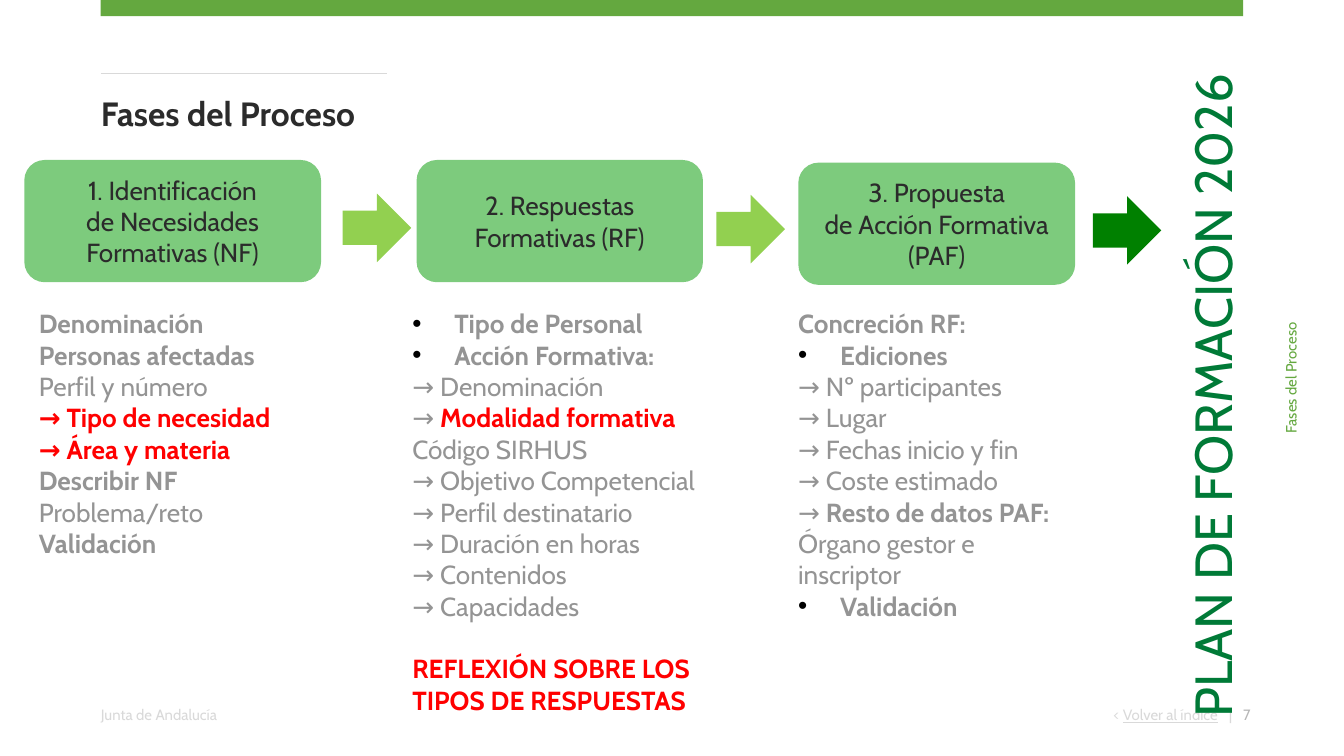
"""Build the slide with the three phases of the training plan process."""
from lxml import etree
from pptx import Presentation
from pptx import util as u
from pptx.enum import shapes as s, text as t
from pptx.oxml import ns

Pt = u.Pt
LEFT, CENTER, RIGHT = t.PP_ALIGN.LEFT, t.PP_ALIGN.CENTER, t.PP_ALIGN.RIGHT
TOP, MIDDLE = t.MSO_ANCHOR.TOP, t.MSO_ANCHOR.MIDDLE
DARK, GREY, PALE, RED, GREEN = "2B2B2B", "949494", "D9D9D9", "FF0000", "64A83F"


def paint(fill, colour):
    fill.solid()
    fill.fore_color.rgb = ns_colour.from_string(colour)


def write(frame, paragraphs, align=LEFT, anchor=TOP, inset=(7.2, 3.6)):
    across, down = (Pt(gap) for gap in inset)
    layout = dict(word_wrap=True, auto_size=t.MSO_AUTO_SIZE.NONE, vertical_anchor=anchor,
                  margin_left=across, margin_right=across, margin_top=down, margin_bottom=down)
    for key, value in layout.items():
        setattr(frame, key, value)
    for number, runs in enumerate(paragraphs):
        paragraph = frame.add_paragraph() if number else frame.paragraphs[0]
        paragraph.alignment = align
        for words, size, colour, bold, underline in runs:
            run = paragraph.add_run()
            run.text = words
            look = dict(name="Cabin", size=Pt(size), bold=bold, underline=underline)
            for key, value in look.items():
                setattr(run.font, key, value)
            paint(run.font.fill, colour)


from pptx.dml.color import RGBColor as ns_colour

deck = Presentation()
deck.slide_width, deck.slide_height = Pt(720), Pt(405)
slide = deck.slides.add_slide(deck.slide_layouts[5])

title = slide.shapes.title
place = dict(left=Pt(54), top=Pt(49.7), width=Pt(282), height=Pt(58.3))
for key, value in place.items():
    setattr(title, key, value)
write(title.text_frame, [[("Fases del Proceso", 18, DARK, True, False)]], inset=(0, 0))

top_bar = slide.shapes.add_shape(s.MSO_SHAPE.RECTANGLE, Pt(54), 0, Pt(612), Pt(8.64))
top_bar.shadow.inherit = False
paint(top_bar.fill, GREEN)
top_bar.line.fill.background()

title_rule = slide.shapes.add_connector(s.MSO_CONNECTOR.STRAIGHT, Pt(54), Pt(39.4), Pt(207.4), Pt(39.4))
paint(title_rule.line.fill, PALE)
title_rule.line.width = Pt(0.75)
etree.SubElement(title_rule.element.spPr, ns.qn("a:effectLst"))

small_texts = [
    (54, 378, 140, 16, 0, LEFT, TOP, [("Junta de Andalucía", 8, PALE, False, False)]),
    (475.2, 378, 177.4, 16, 0, RIGHT, TOP, [("< ", 8, PALE, False, False),
                                            ("Volver al índice", 8, PALE, False, True)]),
    (650, 378, 10.2, 16, 0, RIGHT, TOP, [("|", 8, PALE, False, False)]),
    (666, 378, 40, 21, 0, LEFT, TOP, [("7", 8, "B7B7B7", False, False)]),
    (599, 194.4, 185, 16, 270, CENTER, MIDDLE, [("Fases del Proceso", 8, GREEN, False, False)]),
    (462.2, 191.5, 373.7, 41, 270, CENTER, MIDDLE,
     [("PLAN DE FORMACIÓN 2026", 28, "007A37", False, False)]),
]
for left, top, width, height, turn, align, anchor, runs in small_texts:
    label = slide.shapes.add_textbox(Pt(left), Pt(top), Pt(width), Pt(height))
    label.rotation = turn
    write(label.text_frame, [runs], align, anchor, (0, 0))

phases = [
    (13, 85.7, 159, ["1. Identificación", "de Necesidades Formativas (NF)"]),
    (223.2, 85.7, 153.4, ["2. Respuestas Formativas (RF)"]),
    (427.7, 87.1, 148.3, ["3. Propuesta", "de Acción Formativa (PAF)"]),
]
for left, top, width, lines in phases:
    phase = slide.shapes.add_shape(s.MSO_SHAPE.ROUNDED_RECTANGLE, Pt(left), Pt(top), Pt(width), Pt(65.5))
    phase.shadow.inherit = False
    paint(phase.fill, "009900")
    tint = phase.element.spPr.find(ns.qn("a:solidFill"))[0]
    etree.SubElement(tint, ns.qn("a:alpha"), val="51000")
    phase.line.fill.background()
    write(phase.text_frame, [[(line, 14, DARK, False, False)] for line in lines], CENTER, MIDDLE)

for left, top, colour in [(183.6, 103.7, "92D050"), (383.8, 104.4, "92D050"), (585.4, 105.1, "008000")]:
    arrow = slide.shapes.add_shape(s.MSO_SHAPE.RIGHT_ARROW, Pt(left), Pt(top), Pt(36.7), Pt(36.7))
    arrow.shadow.inherit = False
    paint(arrow.fill, colour)
    arrow.line.fill.background()

styles = {"plain": (GREY, False), "bold": (GREY, True), "bullet": (GREY, True), "red": (RED, True)}
details = [
    (13.7, 170, 143, [
        ("bold", "Denominación"), ("bold", "Personas afectadas"), ("plain", "Perfil y número"),
        ("red", "→ Tipo de necesidad"), ("red", "→ Área y materia"), ("bold", "Describir NF"),
        ("plain", "Problema/reto"), ("bold", "Validación")]),
    (213.8, 170, 227.5, [
        ("bullet", "Tipo de Personal"), ("bullet", "Acción Formativa:"), ("plain", "→ Denominación"),
        ("red", "Modalidad formativa", "→ "), ("plain", "Código SIRHUS"),
        ("plain", "→ Objetivo Competencial"), ("plain", "→ Perfil destinatario"),
        ("plain", "→ Duración en horas"), ("plain", "→ Contenidos"), ("plain", "→ Capacidades"),
        ("red", "REFLEXIÓN SOBRE LOS TIPOS DE RESPUESTAS")]),
    (420.5, 190, 177, [
        ("bold", "Concreción RF:"), ("bullet", "Ediciones"), ("plain", "→ Nº participantes"),
        ("plain", "→ Lugar"), ("plain", "→ Fechas inicio y fin"), ("plain", "→ Coste estimado"),
        ("bold", "Resto de datos PAF:", "→ "), ("plain", "Órgano gestor e"),
        ("plain", "inscriptor"), ("bullet", "Validación")]),
]
for left, width, height, entries in details:
    detail = slide.shapes.add_textbox(Pt(left), Pt(161.3), Pt(width), Pt(height))
    write(detail.text_frame, [
        [(lead, 14, GREY, False, False) for lead in leads] + [(words, 14, *styles[style], False)]
        for style, words, *leads in entries])
    for paragraph, (style, words, *leads) in zip(detail.text_frame.paragraphs, entries):
        if style == "bullet":
            marks = paragraph._p.get_or_add_pPr()
            marks.set("marL", str(Pt(22.5)))
            marks.set("indent", str(-Pt(22.5)))
            bullet_colour = etree.SubElement(marks, ns.qn("a:buClr"))
            etree.SubElement(bullet_colour, ns.qn("a:srgbClr"), val="000000")
            etree.SubElement(marks, ns.qn("a:buFont"), typeface="Arial")
            etree.SubElement(marks, ns.qn("a:buChar"), char="•")
        if words.startswith("REFLEXIÓN"):
            paragraph.space_before = Pt(16.8)

deck.save("out.pptx")
